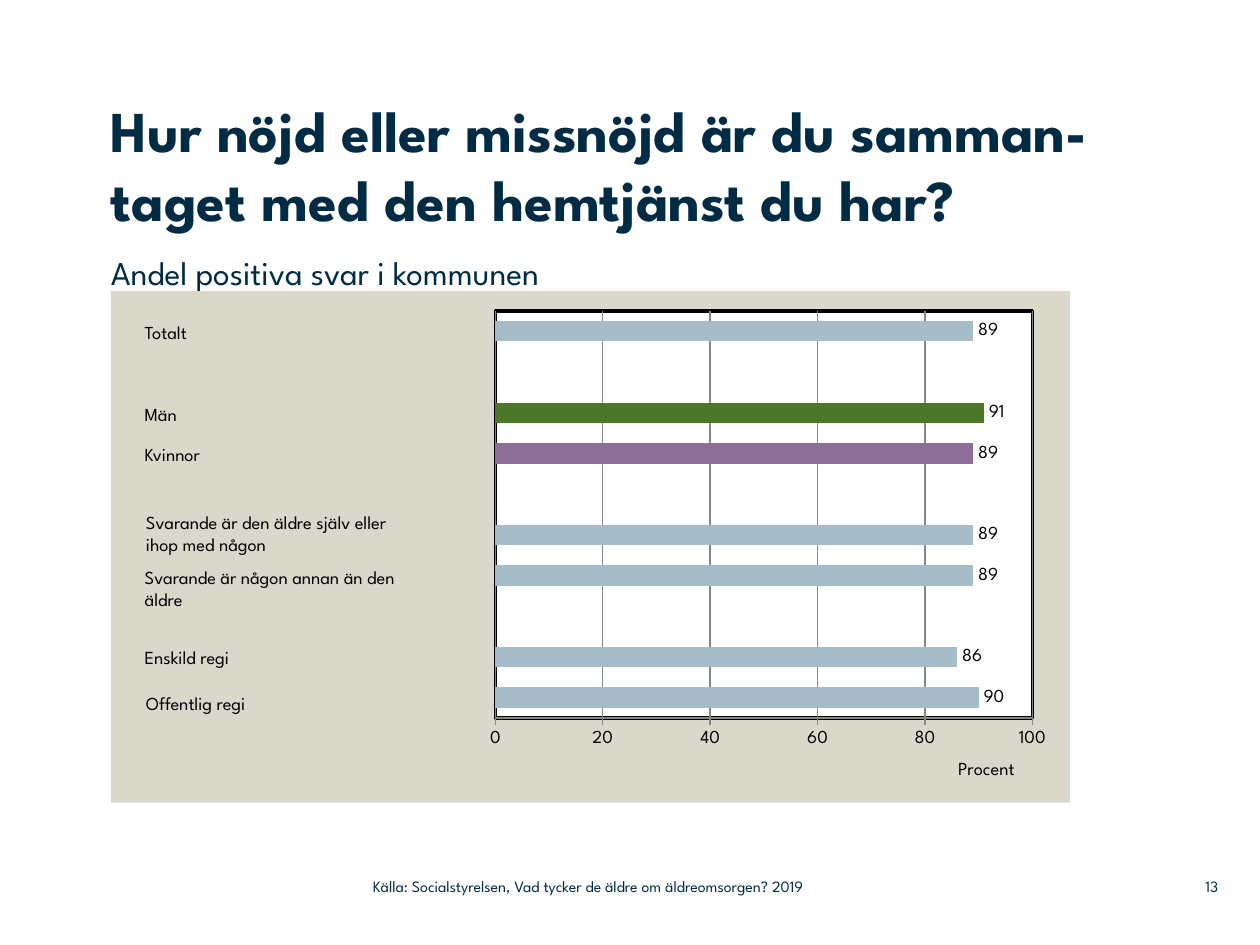
from dataclasses import dataclass
from typing import NamedTuple

from pptx import Presentation
from pptx.chart.data import CategoryChartData
from pptx.dml.color import RGBColor
from pptx.enum.chart import XL_CHART_TYPE, XL_LABEL_POSITION, XL_TICK_MARK
from pptx.enum.text import MSO_ANCHOR, MSO_AUTO_SIZE, PP_ALIGN
from pptx.oxml import parse_xml
from pptx.oxml.ns import nsdecls, qn
from pptx.util import Pt


@dataclass(frozen=True)
class Theme:
    font: str = "League Spartan"
    navy: str = "002B45"
    black: str = "000000"
    white: str = "FFFFFF"
    panel: str = "DAD7CB"
    grid: str = "868686"
    blue: str = "A6BCC6"
    green: str = "4A7729"
    purple: str = "8D6E97"
    title: float = 33
    subtitle: float = 19
    label: float = 10.5
    small: float = 9


class Box(NamedTuple):
    left: float
    top: float
    width: float
    height: float


class Bar(NamedTuple):
    value: int | None
    color: str | None


class Label(NamedTuple):
    text: str
    left: float
    top: float


T = Theme()
GAP = Bar(None, None)
# Listed from the bottom of the chart upwards
BARS = [
    Bar(90, T.blue), Bar(86, T.blue), GAP,
    Bar(89, T.blue), Bar(89, T.blue), GAP,
    Bar(89, T.purple), Bar(91, T.green), GAP,
    Bar(89, T.blue),
]
LABELS = [
    Label("Totalt", 75.6, 180),
    Label("Män", 75.6, 226.8),
    Label("Kvinnor", 75.6, 249.8),
    Label("Svarande är den äldre själv eller\nihop med någon", 76.3, 288.7),
    Label("Svarande är någon annan än den\näldre", 75.6, 319.7),
    Label("Enskild regi", 75.6, 365.8),
    Label("Offentlig regi", 76.3, 391.7),
]


def rgb(color: str) -> RGBColor:
    return RGBColor.from_string(color)


def place(sp, box: Box) -> None:
    sp.left, sp.top, sp.width, sp.height = map(Pt, box)


def style_font(font, size: float, color: str, bold: bool = False) -> None:
    font.name, font.size, font.bold = T.font, Pt(size), bold
    font.color.rgb = rgb(color)


def write(sp, text: str, *, size: float, color: str, bold: bool = False,
          align=PP_ALIGN.LEFT, anchor=MSO_ANCHOR.TOP, wrap: bool = True,
          inset: tuple[float, float] = (0, 0), after: float = 0) -> None:
    """Fill a shape with text, one paragraph per line; inset is (x, y)."""
    tf = sp.text_frame
    tf.auto_size = MSO_AUTO_SIZE.NONE
    tf.word_wrap, tf.vertical_anchor = wrap, anchor
    tf.margin_left = tf.margin_right = Pt(inset[0])
    tf.margin_top = tf.margin_bottom = Pt(inset[1])
    tf.text = text
    for p in tf.paragraphs:
        p.alignment, p.space_after = align, Pt(after)
        for r in p.runs:
            style_font(r.font, size, color, bold)


def add_text(s, box: Box, text: str, **fmt) -> None:
    write(s.shapes.add_textbox(*map(Pt, box)), text, **fmt)


def set_layout(parent, index: int, inner: bool = False, **values: float) -> None:
    """Give a chart part a manual layout in fractions of the chart."""
    modes = "".join(f'<c:{k}Mode val="edge"/>' for k in values if k in "xy")
    sizes = "".join(f'<c:{k} val="{v}"/>' for k, v in values.items())
    target = '<c:layoutTarget val="inner"/>' if inner else ""
    old = parent.find(qn("c:layout"))
    if old is not None:
        parent.remove(old)
    parent.insert(index, parse_xml(
        f'<c:layout {nsdecls("c")}><c:manualLayout>{target}{modes}{sizes}'
        "</c:manualLayout></c:layout>"))


def area_style(fill: str, line: str | None = None, width: float = 0):
    """Return the fill and outline element of a chart area."""
    def paint(color: str | None) -> str:
        return (f'<a:solidFill><a:srgbClr val="{color}"/></a:solidFill>'
                if color else "<a:noFill/>")
    return parse_xml(f'<c:spPr {nsdecls("c", "a")}>{paint(fill)}'
                     f'<a:ln w="{Pt(width)}">{paint(line)}</a:ln></c:spPr>')


def style_value_axis(axis) -> None:
    axis.minimum_scale, axis.maximum_scale, axis.major_unit = 0, 100, 20
    axis.major_tick_mark = XL_TICK_MARK.OUTSIDE
    axis.has_major_gridlines = True
    for line in (axis.format.line, axis.major_gridlines.format.line):
        line.color.rgb, line.width = rgb(T.grid), Pt(0.75)
    style_font(axis.tick_labels.font, T.label, T.black)
    tf = axis.axis_title.text_frame
    tf.text = "Procent"
    style_font(tf.paragraphs[0].runs[0].font, T.label, T.black)
    set_layout(axis.axis_title._element, 1, x=0.88, y=0.91)


def add_bar_chart(s, box: Box, bars: list[Bar]) -> None:
    data = CategoryChartData()
    data.categories = [str(i) for i in range(1, len(bars) + 1)]
    data.add_series("Series 1", [bar.value for bar in bars])
    chart = s.shapes.add_chart(
        XL_CHART_TYPE.BAR_CLUSTERED, *map(Pt, box), data).chart
    chart.has_legend = chart.has_title = False
    style_font(chart.font, T.label, T.black)
    chart.category_axis.visible = False
    style_value_axis(chart.value_axis)

    plot = chart.plots[0]
    plot.vary_by_categories = False
    plot.gap_width, plot.overlap = 100, -25
    series = plot.series[0]
    series.invert_if_negative = False
    series.format.fill.solid()
    series.format.fill.fore_color.rgb = rgb(T.green)
    for i, bar in enumerate(bars):
        if bar.color and bar.color != T.green:
            fill = series.points[i].format.fill
            fill.solid()
            fill.fore_color.rgb = rgb(bar.color)
    labels = series.data_labels
    labels.show_value = True
    labels.position = XL_LABEL_POSITION.OUTSIDE_END
    style_font(labels.font, T.label, T.black)

    body = chart.element.find(qn("c:chart"))
    body.addnext(area_style(T.panel))
    area = body.find(qn("c:plotArea"))
    set_layout(area, 0, inner=True, x=0.401, y=0.039, w=0.56, h=0.796)
    area.append(area_style(T.white, T.black, 2))


def main() -> None:
    prs = Presentation()
    prs.slide_width, prs.slide_height = Pt(720), Pt(540)
    s = prs.slides.add_slide(prs.slide_layouts[5])

    title = s.shapes.title
    place(title, Box(63.4, 54, 635.8, 102.2))
    write(title, "Hur nöjd eller missnöjd är du samman-\vtaget med den hemtjänst du har?",
          size=T.title, color=T.navy, bold=True)
    add_text(s, Box(63.4, 144, 467.3, 32.4), "Andel positiva svar i kommunen",
             size=T.subtitle, color=T.navy, after=8)

    add_bar_chart(s, Box(63.4, 166.3, 547.9, 292.3), BARS)
    for label in LABELS:
        height = 20.2 + 12.2 * label.text.count("\n")
        add_text(s, Box(label.left, label.top, 190, height), label.text,
                 size=T.label, color=T.black, inset=(7.2, 3.6))

    small = dict(size=T.small, color=T.navy, anchor=MSO_ANCHOR.MIDDLE)
    add_text(s, Box(662.4, 496.1, 33.8, 20.9), "13", align=PP_ALIGN.RIGHT, **small)
    add_text(s, Box(213.1, 496.1, 319, 20.9),
             "Källa: Socialstyrelsen, Vad tycker de äldre om äldreomsorgen? 2019", **small)

    prs.save("out.pptx")


if __name__ == "__main__":
    main()
